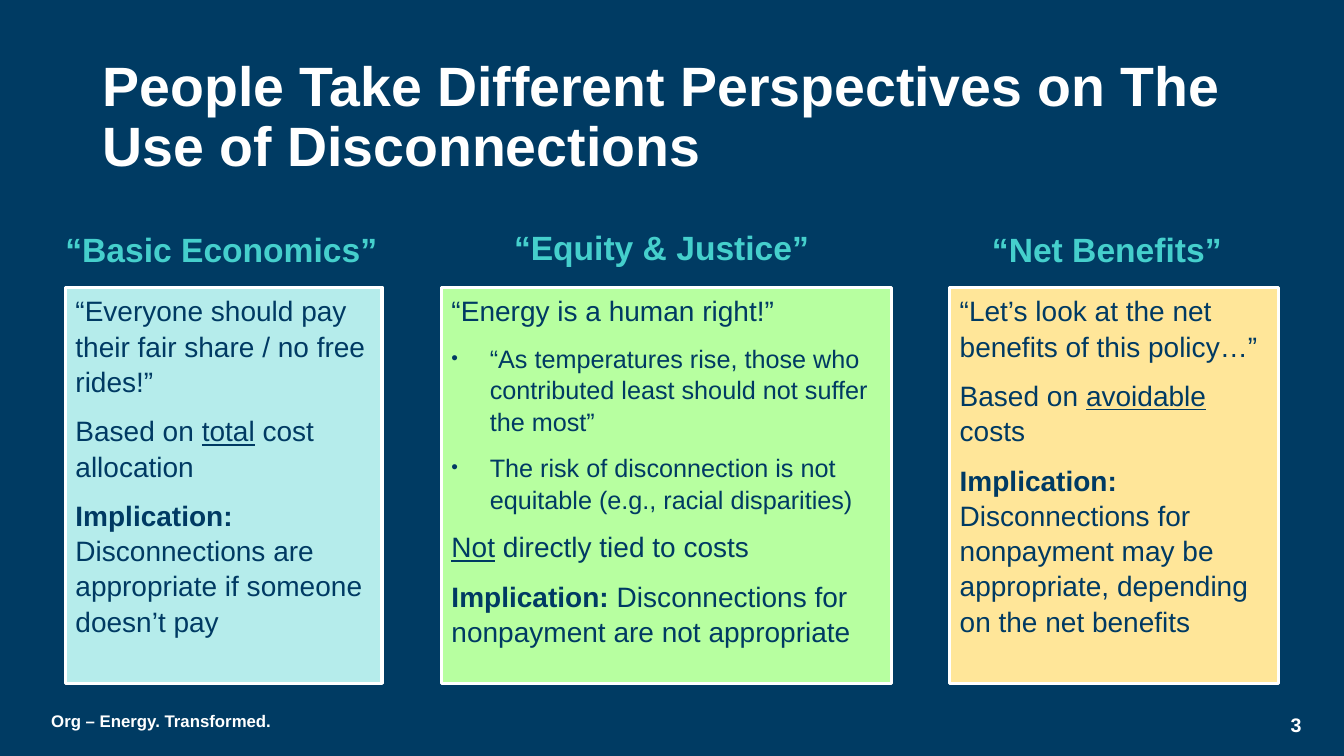
from dataclasses import dataclass

from lxml import etree
from pptx import Presentation
from pptx.dml.color import RGBColor
from pptx.enum.shapes import MSO_SHAPE
from pptx.enum.text import MSO_ANCHOR, PP_ALIGN
from pptx.oxml.ns import qn
from pptx.util import Pt

RECT = MSO_SHAPE.RECTANGLE
TOP, MIDDLE, BOTTOM = MSO_ANCHOR.TOP, MSO_ANCHOR.MIDDLE, MSO_ANCHOR.BOTTOM
LEFT, CENTER = PP_ALIGN.LEFT, PP_ALIGN.CENTER

EMU_PER_PX = 9144
FONT = "Arial"
COLORS = {
    "navy": "003B63",
    "ink": "003A63",
    "white": "FFFFFF",
    "teal": "45CFCC",
    "aqua": "B5ECEB",
    "green": "B7FFA0",
    "yellow": "FFE699",
}
CARD_TOP, CARD_HEIGHT = 285, 393
HEADING_HEIGHT = 70
BULLET_INDENT = 38


@dataclass(frozen=True)
class Run:
    text: str
    bold: bool = False
    underline: bool = False


@dataclass(frozen=True)
class Para:
    runs: tuple[Run, ...]
    size: float = 20
    bullet: bool = False


@dataclass(frozen=True)
class Perspective:
    heading: str
    heading_box: tuple[int, int, int]
    left: int
    width: int
    fill: str
    paras: tuple[Para, ...]


def plain(text: str) -> Para:
    return Para((Run(text),))


def bullet(text: str) -> Para:
    return Para((Run(text),), size=18, bullet=True)


def implication(text: str) -> Para:
    return Para((Run("Implication: ", bold=True), Run(text)))


def based_on(kind: str, rest: str) -> Para:
    return Para((Run("Based on "), Run(kind, underline=True), Run(rest)))


PERSPECTIVES = (
    Perspective(
        "“Basic Economics”", (55, 202, 333), 65, 314, "aqua",
        (
            plain("“Everyone should pay their fair share / no free rides!”"),
            based_on("total", " cost allocation"),
            implication("Disconnections are appropriate if someone doesn’t pay"),
        ),
    ),
    Perspective(
        "“Equity & Justice”", (500, 200, 333), 438, 446, "green",
        (
            plain("“Energy is a human right!”"),
            bullet("“As temperatures rise, those who contributed least should not suffer the most”"),
            bullet("The risk of disconnection is not equitable (e.g., racial disparities)"),
            Para((Run("Not", underline=True), Run(" directly tied to costs"))),
            implication("Disconnections for nonpayment are not appropriate"),
        ),
    ),
    Perspective(
        "“Net Benefits”", (974, 202, 294), 942, 326, "yellow",
        (
            plain("“Let’s look at the net benefits of this policy…”"),
            based_on("avoidable", " costs"),
            implication("Disconnections for nonpayment may be appropriate, depending on the net benefits"),
        ),
    ),
)


def px(n: int) -> int:
    return n * EMU_PER_PX


def rgb(name: str) -> RGBColor:
    return RGBColor.from_string(COLORS[name])


def add_run(p, text: str, *, size: float, color: str, bold: bool = False,
            underline: bool = False) -> None:
    r = p.add_run()
    r.text = text
    r.font.name = FONT
    r.font.size = Pt(size)
    r.font.bold = bold
    r.font.underline = underline
    r.font.color.rgb = rgb(color)


def add_label(slide, text: str, box: tuple[int, int, int, int], *, size: float,
              color: str = "white", anchor=MIDDLE, align=LEFT,
              line_spacing: float = 1.0) -> None:
    sp = slide.shapes.add_textbox(*map(px, box))
    tf = sp.text_frame
    tf.word_wrap = True
    tf.vertical_anchor = anchor
    p = tf.paragraphs[0]
    p.alignment = align
    p.line_spacing = line_spacing
    add_run(p, text, size=size, color=color, bold=True)


def set_bullet(p) -> None:
    pPr = p._p.get_or_add_pPr()
    pPr.set("marL", str(px(BULLET_INDENT)))
    pPr.set("indent", str(-px(BULLET_INDENT)))
    etree.SubElement(pPr, qn("a:buSzPct")).set("val", "75000")
    etree.SubElement(pPr, qn("a:buFont")).set("typeface", FONT)
    etree.SubElement(pPr, qn("a:buChar")).set("char", "•")


def add_card(slide, item: Perspective) -> None:
    box = (item.left, CARD_TOP, item.width, CARD_HEIGHT)
    sp = slide.shapes.add_shape(RECT, *map(px, box))
    sp.shadow.inherit = False
    sp.fill.solid()
    sp.fill.fore_color.rgb = rgb(item.fill)
    sp.line.color.rgb = rgb("white")
    sp.line.width = Pt(2.25)
    tf = sp.text_frame
    tf.word_wrap = True
    tf.vertical_anchor = TOP
    for i, para in enumerate(item.paras):
        p = tf.add_paragraph() if i else tf.paragraphs[0]
        p.alignment = LEFT
        p.space_before = Pt(10)
        p.line_spacing = 1.05
        if para.bullet:
            set_bullet(p)
        for run in para.runs:
            add_run(p, run.text, size=para.size, color="ink",
                    bold=run.bold, underline=run.underline)


def main() -> None:
    prs = Presentation()
    prs.slide_width, prs.slide_height = px(1333), px(750)
    slide = prs.slides.add_slide(prs.slide_layouts[6])
    slide.background.fill.solid()
    slide.background.fill.fore_color.rgb = rgb("navy")

    add_label(slide, "People Take Different Perspectives on The Use of Disconnections",
              (92, 51, 1150, 134), size=39.6, line_spacing=0.9)
    for item in PERSPECTIVES:
        add_label(slide, item.heading, (*item.heading_box, HEADING_HEIGHT),
                  size=24, color="teal", anchor=BOTTOM)
        add_card(slide, item)
    add_label(slide, "Org – Energy. Transformed.", (41, 695, 300, 40), size=12)
    add_label(slide, "3", (1248, 695, 75, 47), size=14, align=CENTER)
    prs.save("out.pptx")


if __name__ == "__main__":
    main()
